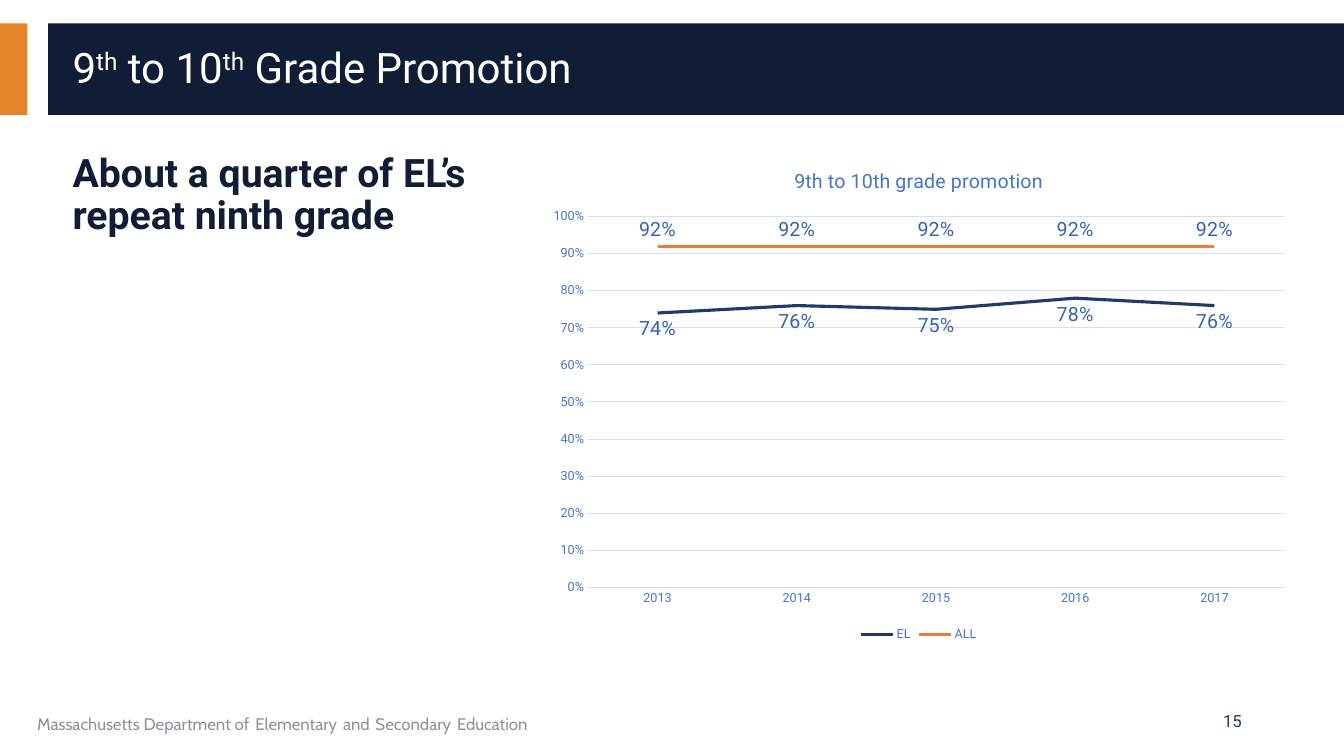
import pptx
import pptx.util
import pptx.chart.data
import pptx.dml.color
import pptx.enum.chart
import pptx.enum.shapes
import pptx.enum.text
import pptx.oxml

Pt = pptx.util.Pt
Align = pptx.enum.text.PP_ALIGN
Anchor = pptx.enum.text.MSO_ANCHOR
Place = pptx.enum.chart.XL_LABEL_POSITION
HUES = {
    "navy": "101D35", "blue": "203B6A", "gold": "E38526",
    "orange": "ED7D31", "gray": "8D92A1", "white": "FFFFFF",
    "axis": "4575C7", "label": "3663B1", "grid": "D4DFF2",
}


def tint(name):
    return pptx.dml.color.RGBColor.from_string(HUES[name])


def style(font, size, hue, face="Roboto", bold=False):
    font.size = Pt(size)
    font.name = face
    font.bold = bold
    font.color.rgb = tint(hue)


def write(para, text, raised=False, **look):
    run = para.add_run()
    run.text = text
    style(run.font, **look)
    if raised:
        run._r.get_or_add_rPr().set("baseline", "30000")


class Deck:
    def __init__(self):
        self.show = pptx.Presentation()
        self.show.slide_width = Pt(960)
        self.show.slide_height = Pt(540)
        self.slide = self.show.slides.add_slide(self.show.slide_layouts[1])
        self.shapes = self.slide.shapes

    def bar(self, box, hue):
        kind = pptx.enum.shapes.MSO_SHAPE.RECTANGLE
        bar = self.shapes.add_shape(kind, *map(Pt, box))
        bar.shadow.inherit = False
        bar.fill.solid()
        bar.fill.fore_color.rgb = tint(hue)
        bar.line.fill.background()
        self.shapes._spTree.insert(2, bar._element)

    def setup(self, shape, anchor, align):
        frame = shape.text_frame
        frame.word_wrap = True
        frame.auto_size = pptx.enum.text.MSO_AUTO_SIZE.NONE
        frame.vertical_anchor = anchor
        para = frame.paragraphs[0]
        para.alignment = align
        return para

    def note(self, box, align=Align.LEFT):
        shape = self.shapes.add_textbox(*map(Pt, box))
        return self.setup(shape, Anchor.MIDDLE, align)

    def holder(self, index, box, anchor):
        shape = self.slide.placeholders[index]
        shape.left, shape.top, shape.width, shape.height = map(Pt, box)
        para = self.setup(shape, anchor, Align.LEFT)
        para.line_spacing = 0.9
        para.space_before = Pt(0)
        return para

    def plain(self, para):
        props = para._p.get_or_add_pPr()
        props.set("marL", "0")
        props.set("indent", "0")
        space = 'xmlns:a="http://schemas.openxmlformats.org/drawingml/2006/main"'
        props.append(pptx.oxml.parse_xml(f"<a:buNone {space}/>"))

    def axis(self, axis):
        none = pptx.enum.chart.XL_TICK_MARK.NONE
        axis.major_tick_mark = axis.minor_tick_mark = none
        style(axis.tick_labels.font, 9, "axis")

    def rule(self, line, hue, width):
        line.color.rgb = tint(hue)
        line.width = Pt(width)

    def chart(self, box, title, years, rows):
        data = pptx.chart.data.CategoryChartData(number_format="0%")
        data.categories = years
        for name, rates, hue, place in rows:
            data.add_series(name, rates)
        kind = pptx.enum.chart.XL_CHART_TYPE.LINE
        chart = self.shapes.add_chart(kind, *map(Pt, box), data).chart
        style(chart.font, 10, "blue")
        chart.has_title = True
        write(chart.chart_title.text_frame.paragraphs[0], title, size=14, hue="axis")
        chart.chart_title.include_in_layout = False
        chart.has_legend = True
        chart.legend.position = pptx.enum.chart.XL_LEGEND_POSITION.BOTTOM
        chart.legend.include_in_layout = False
        style(chart.legend.font, 9, "axis")
        base, scale = chart.category_axis, chart.value_axis
        self.axis(base)
        self.axis(scale)
        self.rule(base.format.line, "grid", 0.75)
        self.rule(scale.major_gridlines.format.line, "grid", 0.75)
        scale.format.line.fill.background()
        scale.minimum_scale, scale.maximum_scale, scale.major_unit = 0, 1, 0.1
        scale.tick_labels.number_format = "0%"
        scale.tick_labels.number_format_is_linked = False
        chart.plots[0].vary_by_categories = False
        for line, (name, rates, hue, place) in zip(chart.plots[0].series, rows):
            line.smooth = False
            line.marker.style = pptx.enum.chart.XL_MARKER_STYLE.NONE
            self.rule(line.format.line, hue, 2.25)
            labels = line.data_labels
            labels.show_value = True
            labels.position = place
            labels.number_format = "0%"
            labels.number_format_is_linked = False
            style(labels.font, 14, "label")


def main():
    deck = Deck()
    deck.bar((0, 16.6, 19.6, 65.5), "gold")
    deck.bar((34.4, 16.6, 925.6, 65.5), "navy")

    foot = deck.note((19.4, 500.4, 607.7, 28.8))
    parts = ["Massachusetts Department of", "Elementary", "and", "Secondary", "Education"]
    for rank, part in enumerate(parts):
        if rank:
            write(foot, " ", size=18, hue="blue", face="Cabin")
        write(foot, part, size=12, hue="gray", face="Cabin")
    write(deck.note((678.2, 500.4, 216, 28.8), Align.RIGHT), "15", size=12, hue="blue")

    head = deck.holder(0, (44.6, 28, 895.7, 43.2), Anchor.MIDDLE)
    for rank, part in enumerate(["9", "th", " to 10", "th", " Grade Promotion"]):
        write(head, part, raised=rank % 2 == 1, size=30, hue="white")

    body = deck.holder(1, (44.6, 105.8, 331.2, 98.6), Anchor.TOP)
    deck.plain(body)
    write(body, "About a quarter of EL’s repeat ninth grade", size=28, hue="navy", bold=True)

    years = [str(year) for year in range(2013, 2018)]
    rows = [
        ("EL", [0.74, 0.76, 0.75, 0.78, 0.76], "blue", Place.BELOW),
        ("ALL", [0.92] * 5, "orange", Place.ABOVE),
    ]
    deck.chart((384.5, 105.8, 543.6, 355.7), "9th to 10th grade promotion", years, rows)
    deck.show.save("out.pptx")


if __name__ == "__main__":
    main()
